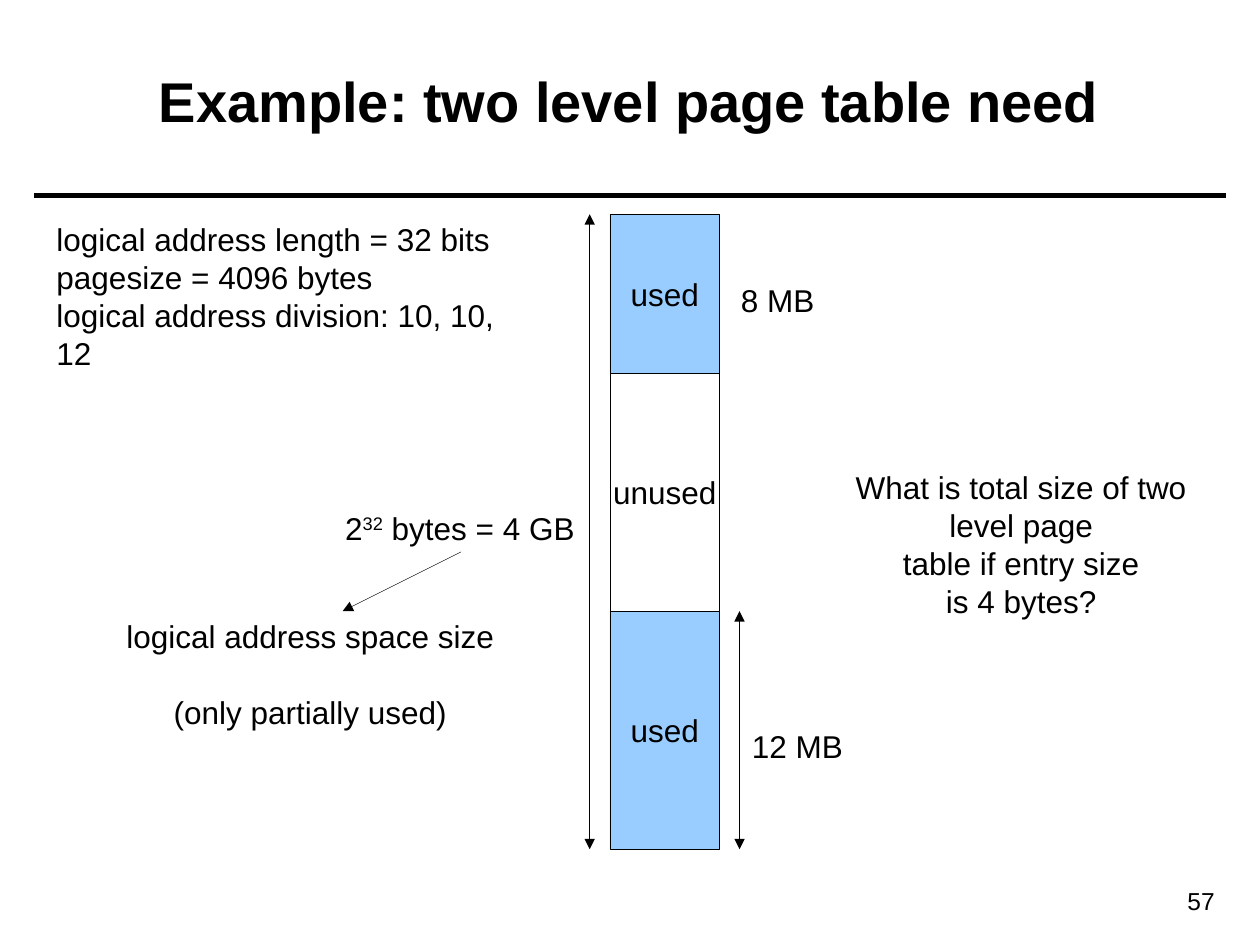
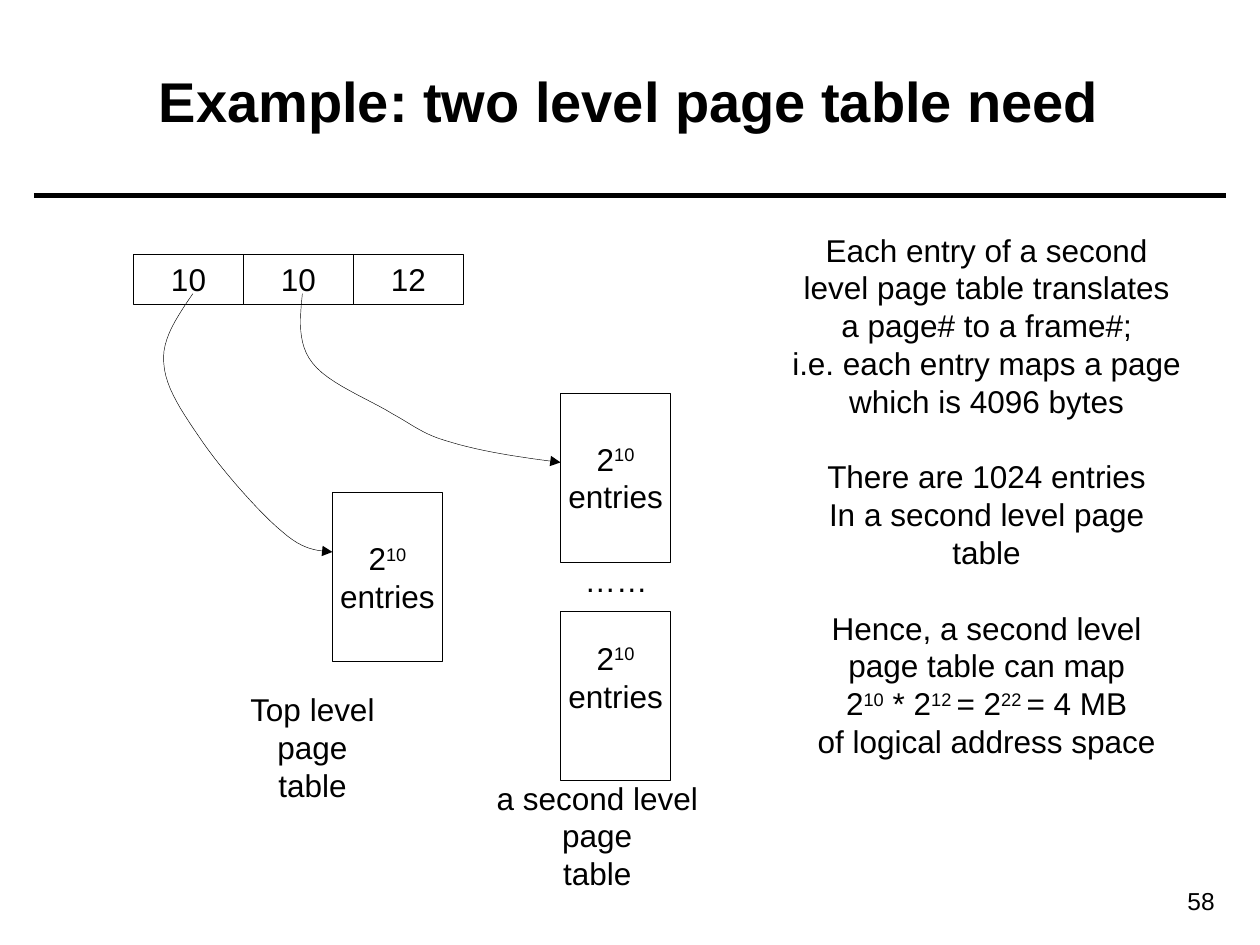
from dataclasses import dataclass

from lxml.etree import SubElement
from pptx import Presentation
from pptx.dml.color import RGBColor
from pptx.enum.shapes import MSO_CONNECTOR, MSO_SHAPE
from pptx.enum.text import MSO_ANCHOR, PP_ALIGN
from pptx.oxml.ns import qn
from pptx.util import Pt


@dataclass(frozen=True)
class Theme:
    font: str = "Arial"
    ink: RGBColor = RGBColor(0, 0, 0)
    used: RGBColor = RGBColor(0x99, 0xCC, 0xFF)
    title: int = 32
    body: int = 18
    number: int = 14
    leading: float = 1.2
    hairline: float = 0.25
    rule: float = 3


T = Theme()
LINE = T.body * T.leading
LEFT, CENTER, RIGHT = PP_ALIGN.LEFT, PP_ALIGN.CENTER, PP_ALIGN.RIGHT

# Content: text between ^ marks is superscript, a leading | leaves one line free
TITLE = "Example: two level page table need"
FACTS = ["logical address length = 32 bits", "pagesize = 4096 bytes",
         "logical address division: 10, 10, 12"]
QUESTION = ["What is total size of two", "level page",
            "table if entry size", "is 4 bytes?"]
SPACE_SIZE = ["2^32^ bytes = 4 GB"]
SPACE_NOTE = ["logical address space size", "|(only partially used)"]
REGIONS = [("used", 2, T.used), ("unused", 3, None), ("used", 3, T.used)]
ADDRESS_BITS = ["10", "10", "12"]
ENTRIES = ["2^10^", "entries"]
EXPLANATION = [
    "Each entry of a second", "level page table translates",
    "a page# to a frame#;", "i.e. each entry maps a page",
    "which is 4096 bytes",
    "|There are 1024 entries", "In a second level page table",
    "|Hence, a second level", "page table can map",
    "2^10^ * 2^12 ^= 2^22 ^= 4 MB", "of logical address space"]

# Geometry in points
COL_W = 62.8
MEMORY_X, MEMORY_Y, MEMORY_UNIT = 348.5, 122.4, 45.36
BITS_X, BITS_Y, BITS_H = 76.3, 145.4, 28.4
TABLE_H = 96.5
TOP_TABLE = (190, 281.5)
SECOND_TABLES = [(320.4, 224.6, 0), (320.4, 349.2, LINE)]  # x, y, free space below text

# Each curve: a start, then Bezier segments of two controls and an end
TO_TOP_TABLE = [
    (110.2, 167.8),
    (101.5, 180.7), (92.2, 193.7), (93.6, 207.4),
    (94.3, 221.8), (105.1, 236.9), (115.9, 252.7),
    (127.4, 269.3), (149, 293.8), (161.3, 303.8),
    (173.5, 314.6), (181.4, 314.6), (190, 315.4)]
TO_SECOND_TABLE = [
    (172.8, 167.8),
    (171.4, 182.2), (169.9, 196.6), (178.6, 207.4),
    (187.2, 218.9), (211, 228.2), (223.9, 236.2),
    (236.9, 243.4), (241.9, 248.4), (257.8, 252.7),
    (274.3, 257.8), (297.4, 261.4), (320.4, 264.2)]


# Helpers
def write(tf, lines, size=T.body, align=CENTER, bold=False):
    tf.margin_left = tf.margin_right = Pt(7.2)
    tf.margin_top = tf.margin_bottom = Pt(3.6)
    for i, line in enumerate(lines):
        p = tf.add_paragraph() if i else tf.paragraphs[0]
        p.alignment = align
        p.line_spacing = Pt(size * T.leading)
        if line.startswith("|"):
            p.space_before = Pt(LINE)
        for j, part in enumerate(line.lstrip("|").split("^")):
            if not part:
                continue
            r = p.add_run()
            r.text = part
            r.font.name, r.font.size, r.font.bold = T.font, Pt(size), bold
            r.font.color.rgb = T.ink
            if j % 2:
                r._r.get_or_add_rPr().set("baseline", "30000")


def text(s, x, y, w, h, lines, wrap=False, anchor=MSO_ANCHOR.TOP, **style):
    tf = s.shapes.add_textbox(Pt(x), Pt(y), Pt(w), Pt(h)).text_frame
    tf.word_wrap, tf.vertical_anchor = wrap, anchor
    write(tf, lines, **style)


def outline(sp, width=T.hairline):
    sp.line.color.rgb, sp.line.width = T.ink, Pt(width)


def box(s, x, y, h, lines, fill=None, space_below=0):
    sp = s.shapes.add_shape(MSO_SHAPE.RECTANGLE, Pt(x), Pt(y), Pt(COL_W), Pt(h))
    sp.shadow.inherit = False
    outline(sp)
    if fill is None:
        sp.fill.background()
    else:
        sp.fill.solid()
        sp.fill.fore_color.rgb = fill
    tf = sp.text_frame
    tf.word_wrap, tf.vertical_anchor = False, MSO_ANCHOR.MIDDLE
    write(tf, lines)
    tf.margin_bottom = Pt(3.6 + space_below)


def arrowheads(sp, *ends):
    ln = sp.line._get_or_add_ln()
    for end in ends:
        SubElement(ln, qn(f"a:{end}")).set("type", "triangle")


def line(s, start, end, ends=(), width=T.hairline):
    sp = s.shapes.add_connector(MSO_CONNECTOR.STRAIGHT, *map(Pt, start + end))
    outline(sp, width)
    arrowheads(sp, *ends)
    SubElement(sp._element.spPr, qn("a:effectLst"))


def bezier(a, b, c, d, t):
    u = 1 - t
    return tuple(Pt(u**3 * k + 3 * u * u * t * m + 3 * u * t * t * n + t**3 * q)
                 for k, m, n, q in zip(a, b, c, d))


def curve_arrow(s, points, steps=12):
    path = [bezier(*points[i:i + 4], step / steps)
            for i in range(0, len(points) - 1, 3) for step in range(1, steps + 1)]
    fb = s.shapes.build_freeform(*map(Pt, points[0]))
    fb.add_line_segments(path, close=False)
    sp = fb.convert_to_shape()
    sp.shadow.inherit = False
    sp.fill.background()
    outline(sp)
    arrowheads(sp, "tailEnd")


def new_slide(prs, number):
    s = prs.slides.add_slide(prs.slide_layouts[6])
    line(s, (19.4, 111.6), (700.6, 111.6), width=T.rule)
    text(s, 626.4, 502.6, 74.9, 24.5, [str(number)], size=T.number, align=RIGHT)
    text(s, 25.2, 12.2, 668.9, 90, [TITLE], wrap=True, anchor=MSO_ANCHOR.MIDDLE,
         size=T.title, bold=True)
    return s


def address_space_slide(prs):
    s = new_slide(prs, 57)
    text(s, 25.2, 122.4, 285, 94, FACTS, wrap=True, align=LEFT)

    # Memory column, region by region
    y = MEMORY_Y
    for label, units, fill in REGIONS:
        top, y = y, y + units * MEMORY_UNIT
        box(s, MEMORY_X, top, y - top, [label], fill)

    # Size arrows and labels
    both = ("headEnd", "tailEnd")
    line(s, (337, MEMORY_Y), (337, y), both)
    line(s, (422.6, top), (422.6, y), both)
    text(s, 422.6, 411.8, 66.2, 28.8, ["12 MB"])
    text(s, 416.2, 157, 56.2, 28.8, ["8 MB"])
    text(s, 189.4, 287.3, 146.9, 28.8, SPACE_SIZE)
    line(s, (263.5, 315.4), (195.8, 349.2), ("tailEnd",))
    text(s, 64.8, 349.2, 225, 72, SPACE_NOTE, wrap=True)
    text(s, 479.5, 264.2, 208, 93.6, QUESTION, wrap=True)


def page_tables_slide(prs):
    s = new_slide(prs, 58)

    # Logical address fields
    for i, bits in enumerate(ADDRESS_BITS):
        box(s, BITS_X + i * COL_W, BITS_Y, BITS_H, [bits])

    # Page tables
    box(s, *TOP_TABLE, TABLE_H, ENTRIES)
    for x, y, space_below in SECOND_TABLES:
        box(s, x, y, TABLE_H, ENTRIES, space_below=space_below)
    text(s, 129.6, 391, 97.9, 50.4, ["Top level", "page table"])
    text(s, 276.5, 441.4, 129.6, 72, ["a second level page", "table"], wrap=True)
    text(s, 326.9, 316.8, 50.4, 28.8, ["……"])

    # Index arrows
    curve_arrow(s, TO_TOP_TABLE)
    curve_arrow(s, TO_SECOND_TABLE)
    text(s, 445, 128.2, 237.6, 310, EXPLANATION, wrap=True)


def main():
    prs = Presentation()
    prs.slide_width, prs.slide_height = Pt(720), Pt(540)
    address_space_slide(prs)
    page_tables_slide(prs)
    prs.save("out.pptx")


if __name__ == "__main__":
    main()
